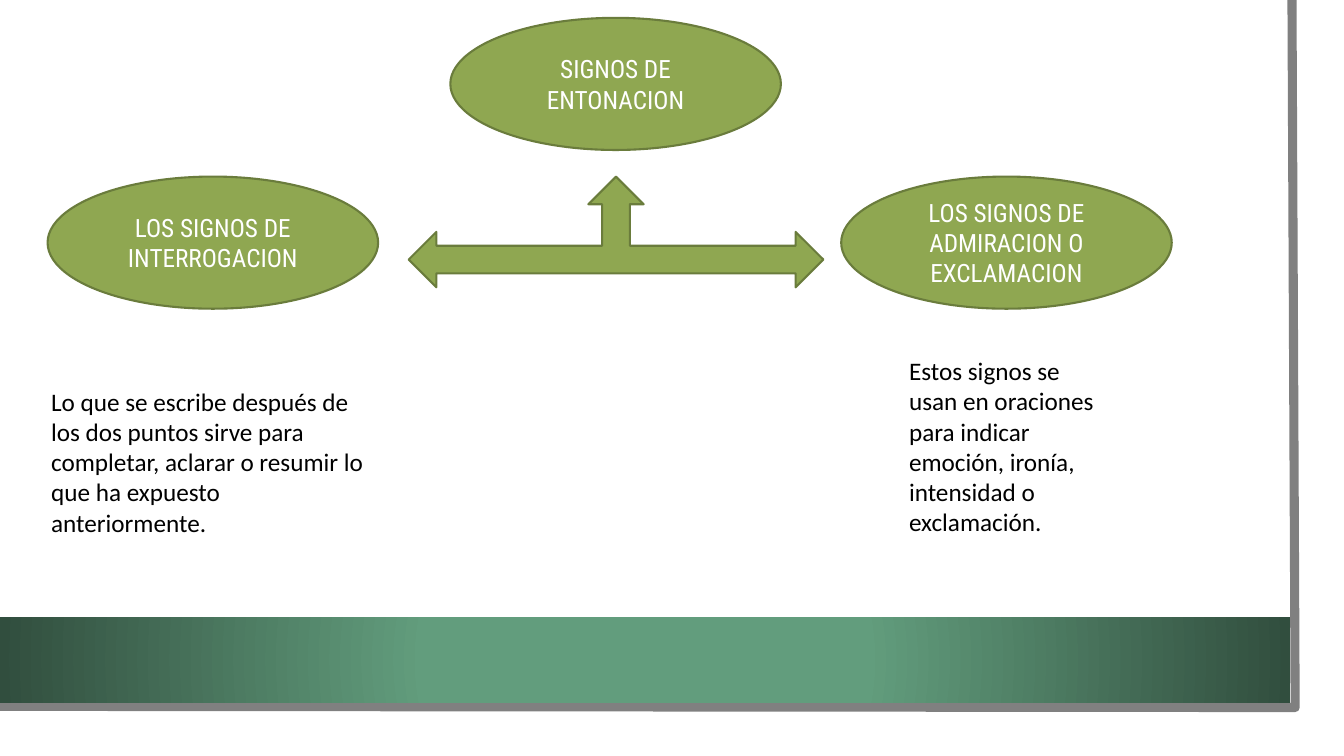
from dataclasses import dataclass

from lxml import etree
from pptx import Presentation
from pptx import util as u
from pptx.dml.color import RGBColor
from pptx.enum import shapes, text
from pptx.oxml.ns import qn


@dataclass(frozen=True)
class Theme:
    paper: str = "FFFFFF"
    frame: str = "808080"
    band_inner: str = "629D7D"
    band_outer: str = "314E3E"
    node: str = "8FA751"
    node_line: str = "6A7C3C"
    ink: str = "000000"
    node_font: str = "Roboto Condensed"
    body_font: str = "Calibri"
    size: float = 18
    node_line_width: float = 1.5
    frame_width: float = 6.5


class SlideBuilder:
    def __init__(self, presentation, theme):
        self.theme = theme
        self.slide = presentation.slides.add_slide(presentation.slide_layouts[6])

    def shape(self, kind, box, fill=None, line=None):
        shape = self.slide.shapes.add_shape(kind, *map(u.Cm, box))
        shape.shadow.inherit = False
        if fill:
            shape.fill.solid()
            shape.fill.fore_color.rgb = RGBColor.from_string(fill)
        self.outline(shape, line, self.theme.node_line_width)
        return shape

    def outline(self, shape, color, width):
        if color is None:
            shape.line.fill.background()
            return
        shape.line.color.rgb = RGBColor.from_string(color)
        shape.line.width = u.Pt(width)

    def put_text(self, shape, words, font, color, align, anchor):
        frame = shape.text_frame
        for name, value in {"word_wrap": True, "vertical_anchor": anchor}.items():
            setattr(frame, name, value)
        paragraph = frame.paragraphs[0]
        paragraph.text = words
        paragraph.alignment = align
        for name, value in {"name": font, "size": u.Pt(self.theme.size)}.items():
            setattr(paragraph.font, name, value)
        paragraph.font.color.rgb = RGBColor.from_string(color)

    def diagram_shape(self, kind, box):
        return self.shape(kind, box, self.theme.node, self.theme.node_line)

    def node(self, words, box):
        ellipse = self.diagram_shape(shapes.MSO_SHAPE.OVAL, box)
        self.put_text(ellipse, words, self.theme.node_font, self.theme.paper,
                      text.PP_ALIGN.CENTER, text.MSO_ANCHOR.MIDDLE)

    def note(self, words, box):
        note = self.slide.shapes.add_textbox(*map(u.Cm, box))
        self.put_text(note, words, self.theme.body_font, self.theme.ink,
                      text.PP_ALIGN.LEFT, text.MSO_ANCHOR.TOP)
        note.text_frame.auto_size = text.MSO_AUTO_SIZE.SHAPE_TO_FIT_TEXT

    def frame(self, points):
        start, *rest = [(u.Cm(x), u.Cm(y)) for x, y in points]
        builder = self.slide.shapes.build_freeform(*start)
        builder.add_line_segments(rest, close=False)
        frame = builder.convert_to_shape()
        frame.shadow.inherit = False
        frame.fill.background()
        self.outline(frame, self.theme.frame, self.theme.frame_width)

    def band(self, box):
        band = self.shape(shapes.MSO_SHAPE.RECTANGLE, box)
        band.fill.gradient()
        stops = ((0.34, self.theme.band_inner), (1, self.theme.band_outer))
        for stop, (position, color) in zip(band.fill.gradient_stops, stops):
            stop.position = position
            stop.color.rgb = RGBColor.from_string(color)
        gradient = band._element.spPr.find(qn("a:gradFill"))
        gradient.remove(gradient.find(qn("a:lin")))
        circle = etree.SubElement(gradient, qn("a:path"), {"path": "circle"})
        etree.SubElement(circle, qn("a:fillToRect"), dict.fromkeys("ltrb", "50000"))


def main():
    presentation = Presentation()
    presentation.slide_width = u.Cm(33.87)
    presentation.slide_height = u.Cm(19.05)
    theme = Theme()
    builder = SlideBuilder(presentation, theme)

    builder.shape(shapes.MSO_SHAPE.RECTANGLE, (0, 0, 33.27, 18.47), theme.paper)
    builder.frame([(32.56, 0), (32.64, 17.83), (-0.08, 17.8)])
    builder.band((0, 15.55, 32.51, 2.16))

    node_size = (8.33, 3.33)
    row_top = 4.45
    for words, left, top in (
        ("SIGNOS DE ENTONACION", 11.35, 0.45),
        ("LOS SIGNOS DE ADMIRACION O EXCLAMACION", 21.2, row_top),
        ("LOS SIGNOS DE INTERROGACION", 1.2, row_top),
    ):
        builder.node(words, (left, top, *node_size))

    builder.note(
        "Lo que se escribe después de los dos puntos sirve para completar, "
        "aclarar o resumir lo que ha expuesto anteriormente.",
        (1.04, 9.6, 8.66, 4.11))
    builder.note(
        "Estos signos se usan en oraciones para indicar emoción, ironía, "
        "intensidad o exclamación.",
        (22.66, 8.83, 5.44, 4.88))
    builder.diagram_shape(shapes.MSO_SHAPE.LEFT_RIGHT_UP_ARROW,
                          (10.3, row_top, 10.45, 2.79))

    presentation.save("out.pptx")


if __name__ == "__main__":
    main()
